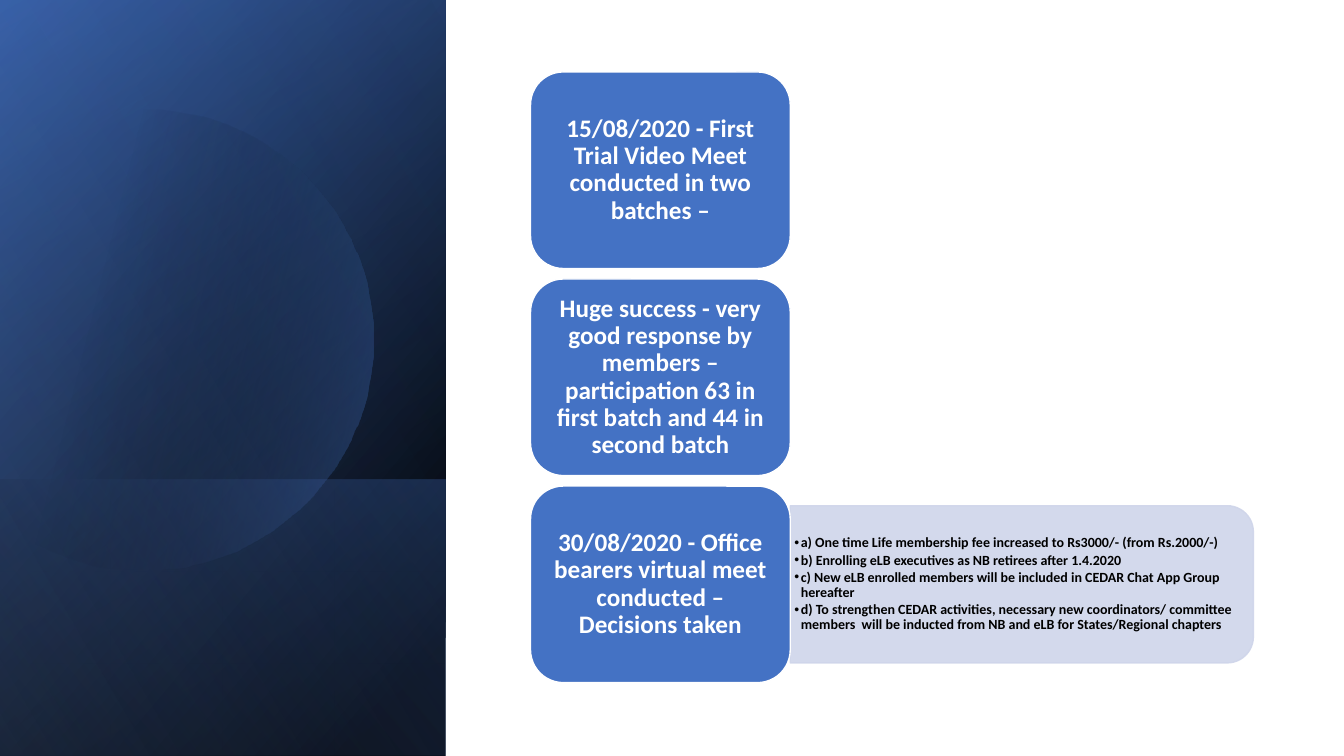
from math import acos, cos, sin, pi

from lxml.etree import SubElement
from pptx import Presentation
from pptx.dml.color import RGBColor
from pptx.enum.shapes import MSO_SHAPE
from pptx.enum.text import MSO_ANCHOR, MSO_AUTO_SIZE, PP_ALIGN
from pptx.oxml import parse_xml
from pptx.oxml.ns import nsdecls, qn
from pptx.util import Pt

WHITE = RGBColor(0xFF, 0xFF, 0xFF)
BLACK = RGBColor(0, 0, 0)
BLUE = RGBColor(0x44, 0x72, 0xC4)
DARK_BLUE = RGBColor(0x2F, 0x55, 0x97)
LIGHT_BLUE = RGBColor(0x8F, 0xAA, 0xDC)
PALE_BLUE = RGBColor(0xCF, 0xD5, 0xEA)
FONT = "Calibri"

MILESTONES = [
    "15/08/2020 - First Trial Video Meet conducted in two batches –",
    "Huge success - very good response by members – participation 63 in first batch and 44 in second batch",
    "30/08/2020 - Office bearers virtual meet conducted – Decisions taken",
]
DECISIONS = [
    "a) One time Life membership fee increased to Rs3000/- (from Rs.2000/-)",
    "b) Enrolling eLB executives as NB retirees after 1.4.2020",
    "c) New eLB enrolled members will be included in CEDAR Chat App Group hereafter",
    "d) To strengthen CEDAR activities, necessary new coordinators/ committee "
    "members  will be inducted from NB and eLB for States/Regional chapters",
]

SLIDE_W, SLIDE_H = 960, 540
SIDE_W = 318.4
BAND_TOP = 342.7
CIRCLE_X, CIRCLE_Y, CIRCLE_R = 102.2, 242.6, 164.9
CARD_X, CARD_Y, CARD_W, CARD_H, CARD_PITCH = 379, 51.4, 185.5, 140.4, 147.9
PANEL_W, PANEL_H = 330.8, 112.3
LIST_W, LIST_H = 324.7, 101.5

BASE = (50, [(8, BLACK, 100), (100, DARK_BLUE, 100)])
GLOW = (30, [(0, BLACK, 0), (99, BLUE, 46)])
BAND = (130, [(2, BLUE, 29), (100, BLACK, 30)])
DISC = (14, [(29, BLACK, 0), (100, BLUE, 43)])
SHEEN = (120, [(0, BLACK, 0), (99, LIGHT_BLUE, 11)])


def set_gradient(sp, gradient):
    angle, stops = gradient
    gs = "".join(
        f'<a:gs pos="{pos * 1000}"><a:srgbClr val="{color}">'
        f'<a:alpha val="{alpha * 1000}"/></a:srgbClr></a:gs>'
        for pos, color, alpha in stops
    )
    grad = parse_xml(
        f'<a:gradFill rotWithShape="1" {nsdecls("a")}><a:gsLst>{gs}</a:gsLst>'
        f'<a:lin ang="{angle * 60000}" scaled="0"/></a:gradFill>'
    )
    sp.fill.background()
    no_fill = sp._element.spPr.find(qn("a:noFill"))
    no_fill.getparent().replace(no_fill, grad)
    sp.line.fill.background()
    sp.shadow.inherit = False


def add_turned(s, kind, x, y, w, h):
    sp = s.shapes.add_shape(kind, Pt(x + (w - h) / 2), Pt(y + (h - w) / 2), Pt(h), Pt(w))
    sp.rotation = 90
    sp.shadow.inherit = False
    return sp


def add_side_layer(s, top, gradient):
    sp = add_turned(s, MSO_SHAPE.RECTANGLE, 0, top, SIDE_W, SLIDE_H - top)
    sp._element.spPr.find(qn("a:xfrm")).set("flipH", "1")
    set_gradient(sp, gradient)


def add_disc(s):
    half = acos(-CIRCLE_X / CIRCLE_R)
    angles = [half * (i / 60 - 1) for i in range(121)]
    points = [(CIRCLE_X + CIRCLE_R * cos(a), CIRCLE_Y + CIRCLE_R * sin(a)) for a in angles]
    builder = s.shapes.build_freeform(*points[0], scale=Pt(1))
    builder.add_line_segments(points[1:], close=True)
    set_gradient(builder.convert_to_shape(), DISC)


def set_text(tf, texts, size, color, align, after, margin_x, margin_y):
    tf.word_wrap = True
    tf.auto_size = MSO_AUTO_SIZE.NONE
    tf.vertical_anchor = MSO_ANCHOR.MIDDLE
    tf.margin_left = tf.margin_right = Pt(margin_x)
    tf.margin_top = tf.margin_bottom = Pt(margin_y)
    for i, text in enumerate(texts):
        p = tf.paragraphs[0] if i == 0 else tf.add_paragraph()
        p.text = text
        p.alignment = align
        p.line_spacing = 0.9
        p.space_before, p.space_after = Pt(0), Pt(after)
        f = p.runs[0].font
        f.name, f.size, f.bold = FONT, Pt(size), True
        f.color.rgb = color


def add_card(s, y, text):
    sp = s.shapes.add_shape(MSO_SHAPE.ROUNDED_RECTANGLE, Pt(CARD_X), Pt(y), Pt(CARD_W), Pt(CARD_H))
    sp.shadow.inherit = False
    sp.fill.solid()
    sp.fill.fore_color.rgb = BLUE
    sp.line.color.rgb = WHITE
    sp.line.width = Pt(1)
    set_text(sp.text_frame, [text], 18, WHITE, PP_ALIGN.CENTER, 0, 5, 3)


def add_decisions(s, body, x, middle):
    panel = add_turned(s, MSO_SHAPE.ROUND_2_SAME_RECTANGLE, x, middle - PANEL_H / 2, PANEL_W, PANEL_H)
    panel.fill.solid()
    panel.fill.fore_color.rgb = PALE_BLUE
    panel.line.color.rgb = PALE_BLUE
    panel.line.width = Pt(1)
    for color in panel._element.spPr.iter(qn("a:srgbClr")):
        SubElement(color, qn("a:alpha")).set("val", "90000")

    body.left, body.top = Pt(x), Pt(middle - LIST_H / 2)
    body.width, body.height = Pt(LIST_W), Pt(LIST_H)
    set_text(body.text_frame, DECISIONS, 10, BLACK, PP_ALIGN.LEFT, 1.5, 3, 1.5)
    for p in body.text_frame.paragraphs:
        pPr = p._p.get_or_add_pPr()
        pPr.set("marL", str(Pt(4.5)))
        pPr.set("indent", str(Pt(-4.5)))
        SubElement(pPr, qn("a:buChar")).set("char", "•")
    s.shapes._spTree.append(body._element)


def main():
    prs = Presentation()
    prs.slide_width, prs.slide_height = Pt(SLIDE_W), Pt(SLIDE_H)
    s = prs.slides.add_slide(prs.slide_layouts[1])
    title, body = s.placeholders
    title._element.getparent().remove(title._element)

    add_side_layer(s, 0, BASE)
    add_side_layer(s, 0, GLOW)
    add_side_layer(s, BAND_TOP, BAND)
    add_disc(s)
    add_side_layer(s, 0, SHEEN)

    tops = [CARD_Y + i * CARD_PITCH for i in range(len(MILESTONES))]
    add_decisions(s, body, CARD_X + CARD_W, tops[-1] + CARD_H / 2)
    for y, text in zip(tops, MILESTONES):
        add_card(s, y, text)
    prs.save("out.pptx")


if __name__ == "__main__":
    main()
